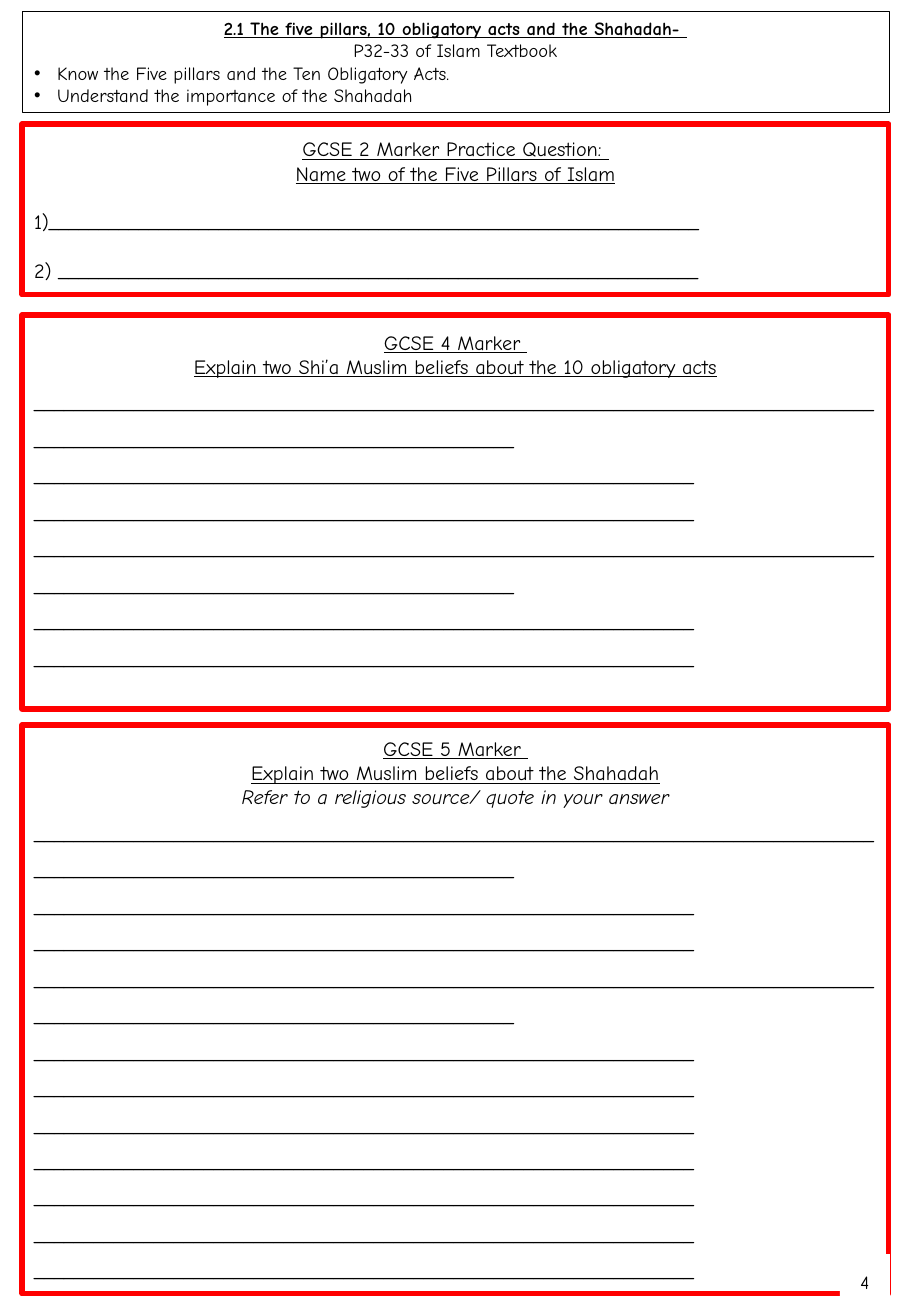
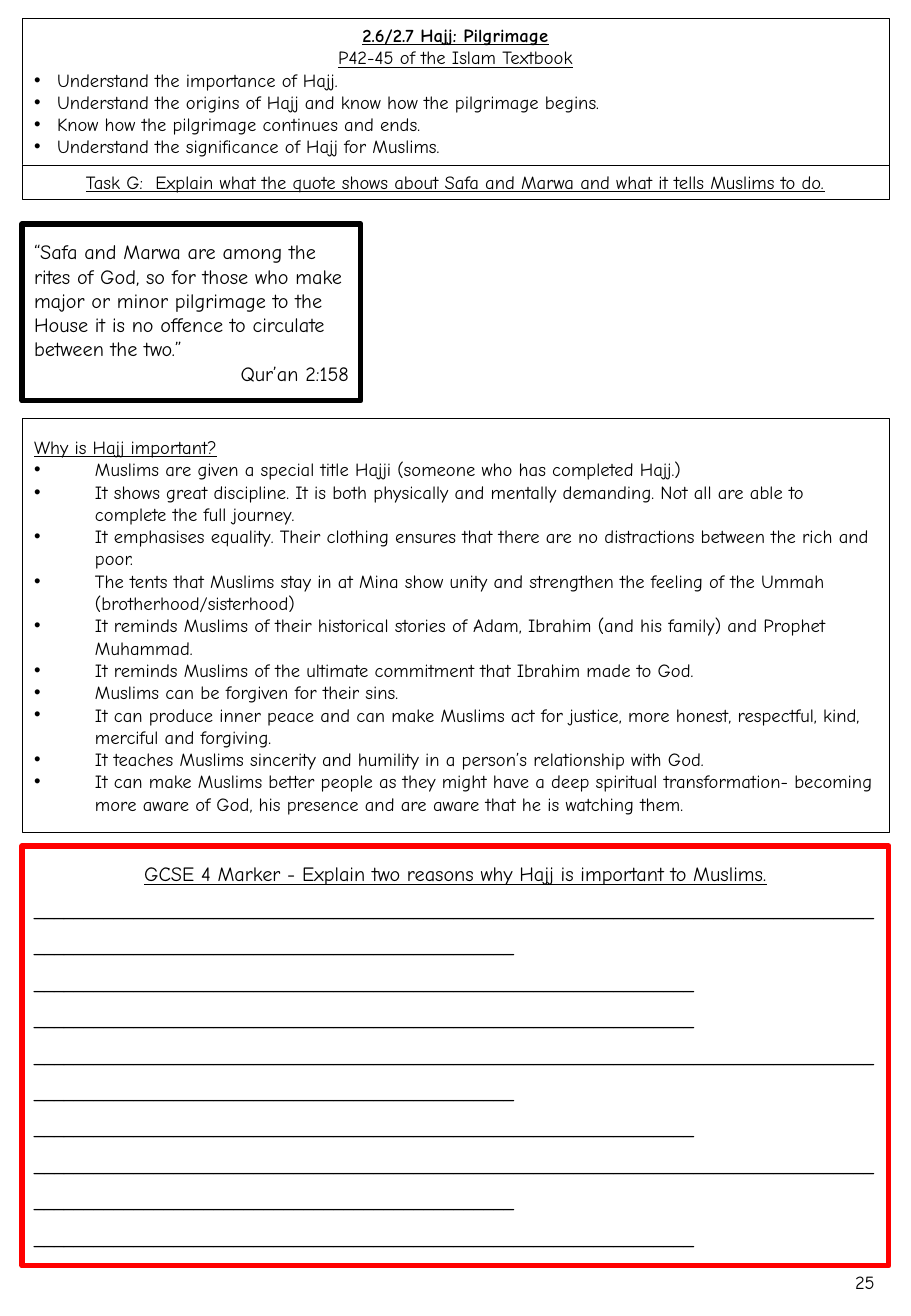
from lxml import etree
from pptx import Presentation
from pptx.dml.color import RGBColor
from pptx.enum.shapes import MSO_SHAPE
from pptx.enum.text import MSO_ANCHOR, PP_ALIGN
from pptx.oxml.ns import qn
from pptx.util import Emu, Pt

RECT = MSO_SHAPE.RECTANGLE
TOP, MID = MSO_ANCHOR.TOP, MSO_ANCHOR.MIDDLE
LEFT, CENTER, RIGHT = PP_ALIGN.LEFT, PP_ALIGN.CENTER, PP_ALIGN.RIGHT

SCALE = 914400 / 121.5  # EMU per px
WIDE, HIGH = 911, 1316
EDGE, FULL = 22, 867
PAD_X, PAD_Y = 12, 6
FONT = "Comic Neue"
COLORS = {"ink": "000000", "paper": "FFFFFF", "exam": "FF0000"}

# Box kinds: line colour, line width, text size, anchor
KINDS = {
    "note": ("ink", 0.5, 11, TOP),
    "facts": ("ink", 0.5, 11, MID),
    "quote": ("ink", 3, 12, MID),
    "exam": ("exam", 3, 12, MID),
    "page": ("paper", 0.5, 11, TOP),
}

# Paragraph styles; indent in px, before in points
STYLES = {
    "title": dict(align=CENTER, bold=True, under=True),
    "head": dict(align=CENTER, under=True),
    "sub": dict(align=CENTER),
    "hint": dict(align=CENTER, italic=True),
    "topic": dict(under=True),
    "aim": dict(indent=23),
    "fact": dict(indent=61),
    "body": {},
    "source": dict(align=RIGHT),
    "item": dict(before=14.4),
    "rule": dict(space=1.5),
    "page": dict(align=CENTER, space=1.5),
}


def rules(marks):
    """Answer lines: L runs over two rows, S fills part of one."""
    return [("rule", "_" * (132 if mark == "L" else 66)) for mark in marks]


def page(number):
    return dict(kind="page", left=840, top=1254, width=50, height=43,
                text=[("page", number)])


SLIDES = [
    [
        dict(kind="note", top=11, height=102, text=[
            ("title", "2.1 The five pillars, 10 obligatory acts and the Shahadah- "),
            ("sub", "P32-33 of Islam Textbook"),
            ("aim", "Know the Five pillars and the Ten Obligatory Acts."),
            ("aim", "Understand the importance of the Shahadah"),
        ]),
        dict(kind="exam", top=315, height=394, foot=24, text=[
            ("head", "GCSE 4 Marker "),
            ("head", "Explain two Shi’a Muslim beliefs about the 10 obligatory acts"),
            *rules("LSSLSS"),
        ]),
        dict(kind="exam", top=725, height=569, text=[
            ("head", "GCSE 5 Marker "),
            ("head", "Explain two Muslim beliefs about the Shahadah"),
            ("hint", "Refer to a religious source/ quote in your answer"),
            *rules("LSSLSSSSSSS"),
        ]),
        dict(kind="exam", top=124, height=171, text=[
            ("head", "GCSE 2 Marker Practice Question: "),
            ("head", "Name two of the Five Pillars of Islam"),
            ("item", "1)" + "_" * 65),
            ("item", "2) " + "_" * 64),
        ]),
        page("4"),
    ],
    [
        page("25"),
        dict(kind="note", top=18, height=147, text=[
            ("title", "2.6/2.7 Hajj: Pilgrimage"),
            ("head", "P42-45 of the Islam Textbook"),
            ("aim", "Understand the importance of Hajj."),
            ("aim", "Understand the origins of Hajj and know how the pilgrimage begins."),
            ("aim", "Know how the pilgrimage continues and ends."),
            ("aim", "Understand the significance of Hajj for Muslims."),
        ]),
        dict(kind="note", top=165, height=35, text=[
            ("head", "Task G:  Explain what the quote shows about Safa and Marwa "
                     "and what it tells Muslims to do."),
        ]),
        dict(kind="quote", top=224, width=339, height=177, text=[
            ("body", "“Safa and Marwa are among the rites of God, so for those who make "
                     "major or minor pilgrimage to the House it is no offence to "
                     "circulate between the two.”"),
            ("source", "Qur’an 2:158"),
        ]),
        dict(kind="facts", top=418, height=415, text=[
            ("topic", "Why is Hajj important?"),
            ("fact", "Muslims are given a special title Hajji (someone who has "
                     "completed Hajj.)"),
            ("fact", "It shows great discipline. It is both physically and mentally "
                     "demanding. Not all are able to complete the full journey."),
            ("fact", "It emphasises equality. Their clothing ensures that there are no "
                     "distractions between the rich and poor."),
            ("fact", "The tents that Muslims stay in at Mina show unity and strengthen "
                     "the feeling of the Ummah (brotherhood/sisterhood)"),
            ("fact", "It reminds Muslims of their historical stories of Adam, Ibrahim "
                     "(and his family) and Prophet Muhammad."),
            ("fact", "It reminds Muslims of the ultimate commitment that Ibrahim made "
                     "to God."),
            ("fact", "Muslims can be forgiven for their sins."),
            ("fact", "It can produce inner peace and can make Muslims act for justice, "
                     "more honest, respectful, kind, merciful and forgiving."),
            ("fact", "It teaches Muslims sincerity and humility in a person’s "
                     "relationship with God."),
            ("fact", "It can make Muslims better people as they might have a deep "
                     "spiritual transformation- becoming more aware of God, his "
                     "presence and are aware that he is watching them."),
        ]),
        dict(kind="exam", top=846, height=420, text=[
            ("head", "GCSE 4 Marker - Explain two reasons why Hajj is important to Muslims."),
            *rules("LSSLSLS"),
        ]),
    ],
]


def px(size):
    return Emu(round(size * SCALE))


def color(name):
    return RGBColor.from_string(COLORS[name])


def add_bullet(para, indent):
    props = para._p.get_or_add_pPr()
    props.set("marL", str(px(indent)))
    props.set("indent", str(-px(indent)))
    etree.SubElement(props, qn("a:buFont")).set("typeface", "Arial")
    etree.SubElement(props, qn("a:buChar")).set("char", "•")


def write(para, text, size, align=LEFT, bold=False, italic=False, under=False,
          indent=0, before=0, space=1.0):
    para.text = text
    if indent:
        add_bullet(para, indent)
    para.alignment = align
    para.line_spacing = space
    para.space_before = Pt(before)
    for run in para.runs:
        font = run.font
        font.name, font.size = FONT, Pt(size)
        font.bold, font.italic, font.underline = bold, italic, under
        font.color.rgb = color("ink")


def add_box(slide, kind, top, height, text, left=EDGE, width=FULL, foot=0):
    """Framed text; foot is extra room kept free below the text."""
    line, weight, size, anchor = KINDS[kind]
    box = slide.shapes.add_shape(RECT, px(left), px(top), px(width), px(height))
    box.shadow.inherit = False
    box.fill.solid()
    box.fill.fore_color.rgb = color("paper")
    box.line.color.rgb = color(line)
    box.line.width = Pt(weight)
    frame = box.text_frame
    frame.word_wrap = True
    frame.vertical_anchor = anchor
    frame.margin_left = frame.margin_right = px(PAD_X)
    frame.margin_top, frame.margin_bottom = px(PAD_Y), px(PAD_Y + foot)
    for i, (style, words) in enumerate(text):
        para = frame.add_paragraph() if i else frame.paragraphs[0]
        write(para, words, size, **STYLES[style])


def main():
    deck = Presentation()
    deck.slide_width, deck.slide_height = px(WIDE), px(HIGH)
    for boxes in SLIDES:
        slide = deck.slides.add_slide(deck.slide_layouts[6])
        for box in boxes:
            add_box(slide, **box)
    deck.save("out.pptx")


if __name__ == "__main__":
    main()
